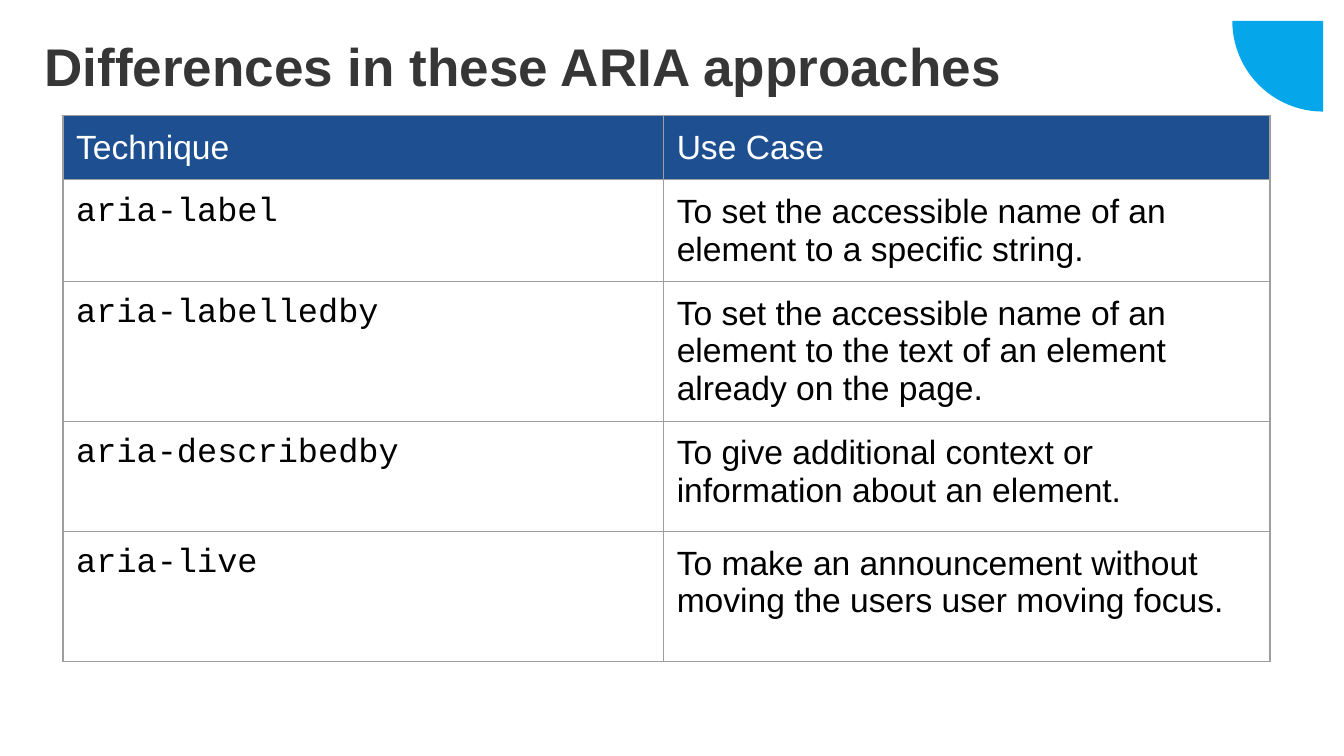
from dataclasses import dataclass

from lxml import etree
from pptx import Presentation
from pptx.dml.color import RGBColor
from pptx.enum import shapes, text
from pptx.oxml import ns
from pptx.util import Cm, Pt


@dataclass(frozen=True)
class Theme:
    dark: str = "373636"
    navy: str = "1D4F91"
    sky: str = "06A6EA"
    grey: str = "9E9E9E"
    white: str = "FFFFFF"
    black: str = "000000"
    sans: str = "Arial"
    mono: str = "Courier New"
    head: float = 28.4
    body: float = 18
    rule: float = 0.75


THEME = Theme()
TITLE = "Differences in these ARIA approaches"
ROWS = [
    ("Technique", "Use Case"),
    ("aria-label",
     "To set the accessible name of an element to a specific string."),
    ("aria-labelledby",
     "To set the accessible name of an element to the text of an element "
     "already on the page."),
    ("aria-describedby",
     "To give additional context or information about an element."),
    ("aria-live",
     "To make an announcement without moving the users user moving focus."),
]
WIDTHS = (11.35, 11.46)
HEIGHTS = (1.22, 1.92, 2.64, 2.08, 2.46)


def rgb(color):
    return RGBColor.from_string(color)


def style(para, size, face, color, bold=False):
    for run in para.runs:
        font = run.font
        font.size, font.name, font.bold = Pt(size), face, bold
        font.color.rgb = rgb(color)


def add_title(slide):
    title = slide.shapes.title
    title.left, title.top = Cm(0.69), Cm(0.61)
    title.width, title.height = Cm(22.96), Cm(1.42)
    frame = title.text_frame
    frame.text = TITLE
    frame.word_wrap = True
    frame.auto_size = text.MSO_AUTO_SIZE.NONE
    frame.vertical_anchor = text.MSO_ANCHOR.MIDDLE
    frame.margin_left = frame.margin_right = Cm(0.15)
    frame.margin_top = frame.margin_bottom = Cm(0.08)
    para = frame.paragraphs[0]
    para.alignment = text.PP_ALIGN.LEFT
    para.line_spacing = 0.9
    style(para, THEME.head, THEME.sans, THEME.dark, True)


def add_wedge(slide):
    wedge = slide.shapes.add_shape(
        shapes.MSO_SHAPE.PIE, Cm(23.29), Cm(-1.32), Cm(3.43), Cm(3.43))
    wedge.adjustments[0], wedge.adjustments[1] = 54, 108
    wedge.shadow.inherit = False
    wedge.fill.solid()
    wedge.fill.fore_color.rgb = rgb(THEME.sky)
    wedge.line.fill.background()


def add_edges(cell):
    props = cell._tc.get_or_add_tcPr()
    for place, side in enumerate(("lnL", "lnR", "lnT", "lnB")):
        line = etree.Element(ns.qn(f"a:{side}"), w=str(Pt(THEME.rule)))
        fill = etree.SubElement(line, ns.qn("a:solidFill"))
        etree.SubElement(fill, ns.qn("a:srgbClr"), val=THEME.grey)
        props.insert(place, line)


def fill_cell(cell, words, header, code):
    cell.text_frame.text = words
    cell.margin_left = cell.margin_right = Cm(0.25)
    cell.margin_top = cell.margin_bottom = Cm(0.25)
    if header:
        cell.fill.solid()
        cell.fill.fore_color.rgb = rgb(THEME.navy)
    else:
        cell.fill.background()
    style(cell.text_frame.paragraphs[0], THEME.body,
          THEME.mono if code else THEME.sans,
          THEME.white if header else THEME.black)
    add_edges(cell)


def add_grid(slide):
    grid = slide.shapes.add_table(
        len(ROWS), len(WIDTHS), Cm(1.19), Cm(2.18),
        Cm(sum(WIDTHS)), Cm(sum(HEIGHTS))).table
    grid.horz_banding = False
    for col, width in zip(grid.columns, WIDTHS):
        col.width = Cm(width)
    for r, (row, height) in enumerate(zip(grid.rows, HEIGHTS)):
        row.height = Cm(height)
        for c, words in enumerate(ROWS[r]):
            header = r == 0
            fill_cell(grid.cell(r, c), words, header, c == 0 and not header)


def main():
    deck = Presentation()
    deck.slide_width, deck.slide_height = Cm(25.4), Cm(14.29)
    slide = deck.slides.add_slide(deck.slide_layouts[5])
    add_wedge(slide)
    add_title(slide)
    add_grid(slide)
    deck.save("out.pptx")


if __name__ == "__main__":
    main()
